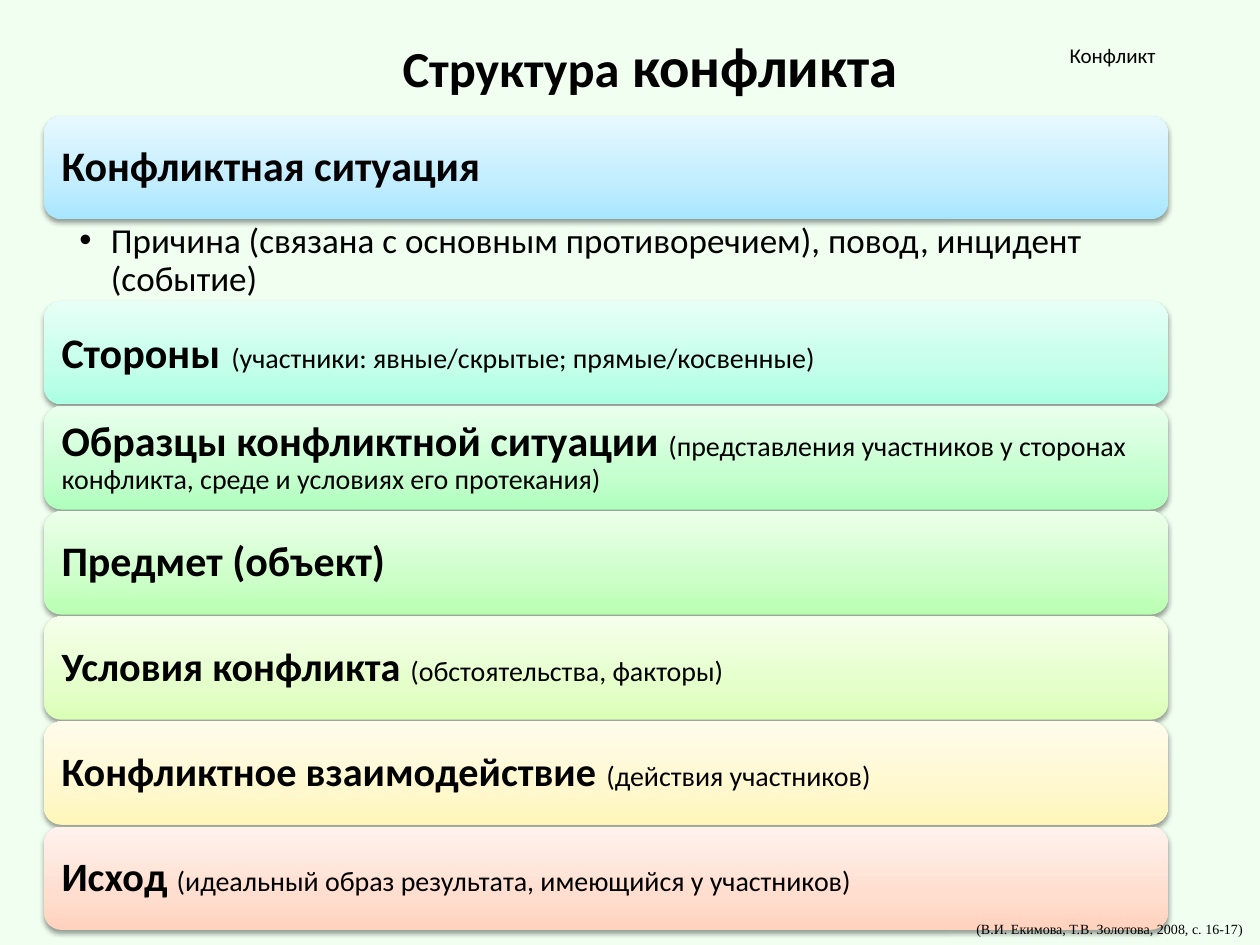
from dataclasses import dataclass

from pptx import Presentation
from pptx.dml.color import RGBColor
from pptx.enum.shapes import MSO_SHAPE
from pptx.enum.text import MSO_ANCHOR as ANCHOR, MSO_AUTO_SIZE as AUTO, PP_ALIGN as ALIGN
from pptx.oxml import parse_xml
from pptx.oxml.ns import nsdecls
from pptx.util import Inches, Pt

BLACK = RGBColor(0x00, 0x00, 0x00)
BACKGROUND = RGBColor(0xF1, 0xFF, 0xF1)
BAR_LEFT, BAR_WIDTH, BAR_HEIGHT = 0.35, 8.92, 0.82
FIRST_TOP, SECOND_TOP, PITCH = 0.92, 2.39, 0.834


@dataclass
class Run:
    text: str
    size: float
    bold: bool = False
    font: str = "Calibri"


@dataclass
class Bar:
    runs: list[Run]
    colors: tuple[str, str, str]  # bottom, 35 %, top


def heading(text: str, size: float = 24) -> Run:
    return Run(text, size, True)


def detail(text: str) -> Run:
    return Run(text, 16)


BARS = [
    Bar([heading("Конфликтная ситуация")], ("A7E6FF", "C1EDFF", "E7F8FF")),
    Bar([heading("Стороны"), heading(" ", 28),
         detail("(участники: явные/скрытые; прямые/косвенные)")],
        ("ABFFE3", "C3FFEA", "E8FFF7")),
    Bar([heading("Образцы конфликтной ситуации "),
         detail("(представления участников у сторонах конфликта, "
                "среде и условиях его протекания)")],
        ("AFFFBD", "C6FFD0", "E9FFED")),
    Bar([heading("Предмет (объект)")], ("B9FFB2", "CDFFC9", "ECFFEA")),
    Bar([heading("Условия конфликта ", 23), detail("(обстоятельства, факторы)")],
        ("DBFFB6", "E5FFCB", "F5FFEB")),
    Bar([heading("Конфликтное взаимодействие ", 23), detail("(действия участников)")],
        ("FFF6B9", "FFF8CE", "FFFCEC")),
    Bar([heading("Исход ", 23),
         detail("(идеальный образ результата, имеющийся у участников)")],
        ("FFD2BD", "FFDED0", "FFF2ED")),
]


def place(sp, left: float, top: float, width: float, height: float) -> None:
    sp.left, sp.top, sp.width, sp.height = map(Inches, (left, top, width, height))


def write(sp, runs: list[Run], insets=(0.1, 0.05, 0.1, 0.05), anchor=ANCHOR.TOP,
          align=ALIGN.LEFT, spacing: float = 1.0, wrap: bool = True):
    """Fill the shape with one paragraph and return it."""
    tf = sp.text_frame
    sides = ("margin_left", "margin_top", "margin_right", "margin_bottom")
    frame = {"word_wrap": wrap, "auto_size": AUTO.NONE if wrap else AUTO.SHAPE_TO_FIT_TEXT,
             "vertical_anchor": anchor, **dict(zip(sides, map(Inches, insets)))}
    for name, value in frame.items():
        setattr(tf, name, value)
    p = tf.paragraphs[0]
    p.alignment, p.line_spacing, p.space_before = align, spacing, Pt(0)
    for run in runs:
        r = p.add_run()
        r.text = run.text
        for name, value in {"name": run.font, "size": Pt(run.size), "bold": run.bold}.items():
            setattr(r.font, name, value)
        r.font.color.rgb = BLACK
    return p


def add_bar(slide, bar: Bar, top: float) -> None:
    sp = slide.shapes.add_shape(MSO_SHAPE.ROUNDED_RECTANGLE, Inches(BAR_LEFT), Inches(top),
                                Inches(BAR_WIDTH), Inches(BAR_HEIGHT))
    # Three-stop gradient, running from bottom to top
    sp.fill.gradient()
    sp.fill.gradient_angle = 90
    stops = "".join(f'<a:gs pos="{pos}"><a:srgbClr val="{color}"/></a:gs>'
                    for pos, color in zip((0, 35000, 100000), bar.colors))
    spPr = sp._element.spPr
    old = spPr.find(".//{*}gsLst")
    old.getparent().replace(old, parse_xml(f'<a:gsLst {nsdecls("a")}>{stops}</a:gsLst>'))
    sp.line.fill.background()
    # Soft shadow below
    spPr.append(parse_xml(
        f'<a:effectLst {nsdecls("a")}><a:outerShdw blurRad="{Pt(3.1)}" dist="{Pt(1.6)}" '
        'dir="5400000" rotWithShape="0"><a:srgbClr val="000000"><a:alpha val="38000"/>'
        '</a:srgbClr></a:outerShdw></a:effectLst>'))
    write(sp, bar.runs, (0.1, 0.1, 0.1, 0.1), ANCHOR.MIDDLE, spacing=0.9)


def add_label(slide, run: Run, left: float, top: float, width: float, height: float) -> None:
    sp = slide.shapes.add_textbox(*map(Inches, (left, top, width, height)))
    write(sp, [run], wrap=False)


def main() -> None:
    prs = Presentation()
    prs.slide_width, prs.slide_height = Inches(10), Inches(7.5)
    slide = prs.slides.add_slide(prs.slide_layouts[1])
    slide.background.fill.solid()
    slide.background.fill.fore_color.rgb = BACKGROUND

    # Title
    title, body = slide.placeholders
    place(title, 0.91, 0.24, 8.5, 0.55)
    write(title, [heading("Структура", 28.8), heading(" конфликта", 32.4)],
          anchor=ANCHOR.MIDDLE, align=ALIGN.CENTER)

    # Bullet under the first bar
    place(body, BAR_LEFT, 1.74, BAR_WIDTH, 0.66)
    p = write(body, [Run("Причина (связана с основным противоречием), "
                         "повод, инцидент (событие)", 20)],
              (0.28, 0.03, 0.16, 0.03), spacing=0.9)
    pPr = p._p.get_or_add_pPr()
    pPr.set("marL", str(Inches(0.25)))
    pPr.set("indent", str(Inches(-0.25)))

    # Bars
    for i, bar in enumerate(BARS):
        add_bar(slide, bar, SECOND_TOP + (i - 1) * PITCH if i else FIRST_TOP)

    # Topic and source labels
    add_label(slide, Run("Конфликт", 12), 8.39, 0.29, 0.89, 0.3)
    add_label(slide, Run("(В.И. Екимова, Т.В. Золотова, 2008, с. 16-17)", 8,
                         font="Times New Roman"), 7.65, 7.26, 2.35, 0.24)

    prs.save("out.pptx")


if __name__ == "__main__":
    main()
